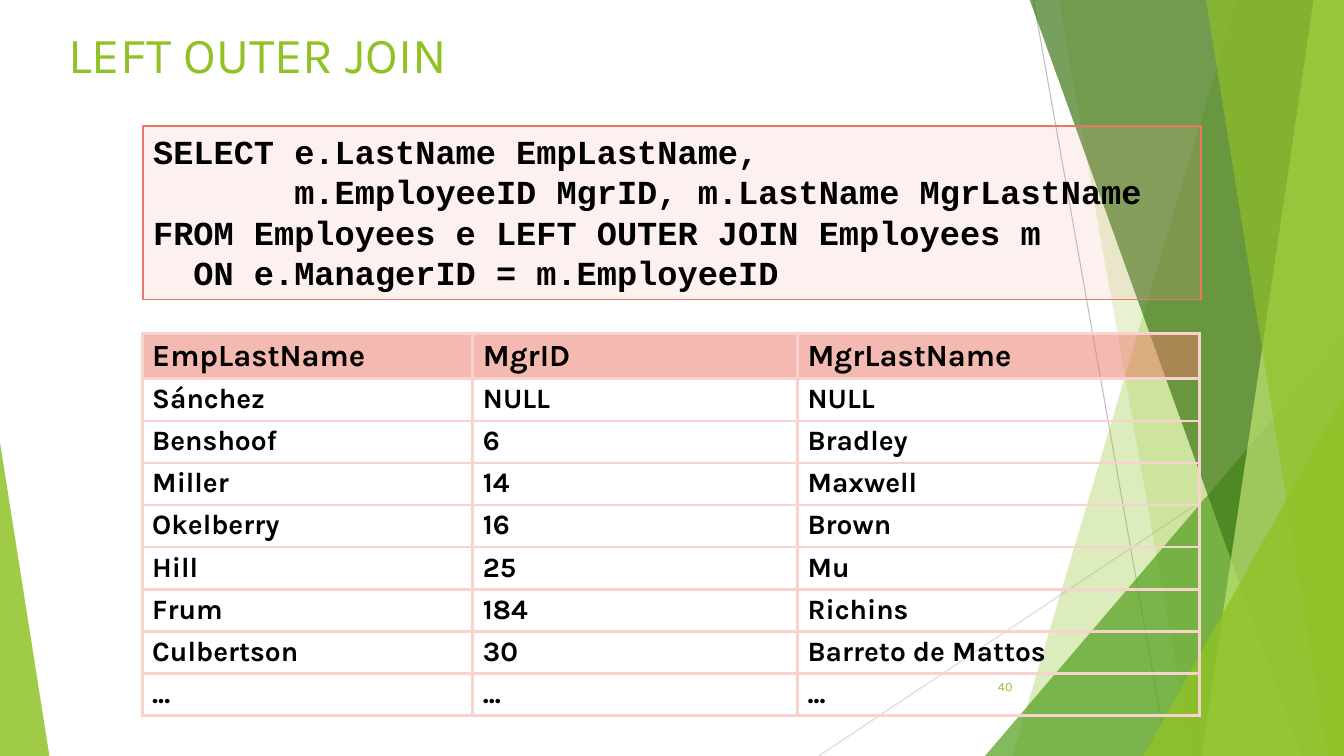
from lxml import etree
from pptx import Presentation
from pptx.dml.color import RGBColor
from pptx.enum.shapes import MSO_CONNECTOR, MSO_SHAPE
from pptx.enum.text import MSO_ANCHOR, MSO_AUTO_SIZE, PP_ALIGN
from pptx.oxml.ns import qn
from pptx.util import Inches, Pt

STRAIGHT = MSO_CONNECTOR.STRAIGHT
TRIANGLE = MSO_SHAPE.ISOSCELES_TRIANGLE
RECTANGLE = MSO_SHAPE.RECTANGLE
MIDDLE = MSO_ANCHOR.MIDDLE
TOP = MSO_ANCHOR.TOP
LEFT = PP_ALIGN.LEFT
RIGHT = PP_ALIGN.RIGHT
FIT_SHAPE = MSO_AUTO_SIZE.SHAPE_TO_FIT_TEXT

BLACK = RGBColor(0x00, 0x00, 0x00)
LIME = RGBColor(0x90, 0xC2, 0x26)
GREEN = RGBColor(0x54, 0xA0, 0x21)
DARK_GREEN = RGBColor(0x3F, 0x78, 0x19)
PALE_LIME = RGBColor(0xC0, 0xE4, 0x74)
GRAY = RGBColor(0xBF, 0xBF, 0xBF)
LIGHT_GRAY = RGBColor(0xD9, 0xD9, 0xD9)
CORAL = RGBColor(0xEB, 0x77, 0x66)
LIGHT_CORAL = RGBColor(0xF2, 0xA4, 0x99)
PALE_CORAL = RGBColor(0xF8, 0xD2, 0xCC)

BODY_FONT = "Karla"
CODE_FONT = "Courier New"
SLIDE_W, SLIDE_H = 13.33, 7.5
BAND_TOP = -0.01

QUERY = """SELECT e.LastName EmpLastName,
       m.EmployeeID MgrID, m.LastName MgrLastName
FROM Employees e LEFT OUTER JOIN Employees m
  ON e.ManagerID = m.EmployeeID"""

RESULT_ROWS = [
    ("EmpLastName", "MgrID", "MgrLastName"),
    ("Sánchez", "NULL", "NULL"),
    ("Benshoof", "6", "Bradley"),
    ("Miller", "14", "Maxwell"),
    ("Okelberry", "16", "Brown"),
    ("Hill", "25", "Mu"),
    ("Frum", "184", "Richins"),
    ("Culbertson", "30", "Barreto de Mattos"),
    ("...", "...", "..."),
]
COLUMN_WIDTHS = (3.28, 3.22, 3.99)
ROW_HEIGHT = 0.38


def fill_translucent(fill, color, opacity):
    """Fill with a colour at the given opacity in percent."""
    fill.solid()
    fill.fore_color.rgb = color
    color_element = fill._xPr.find(qn("a:solidFill"))[0]
    etree.SubElement(color_element, qn("a:alpha"), val=str(opacity * 1000))


def style_runs(frame, font_name, size, color, bold=False, align=LEFT):
    for paragraph in frame.paragraphs:
        paragraph.alignment = align
        for run in paragraph.runs:
            run.font.name = font_name
            run.font.size = Pt(size)
            run.font.color.rgb = color
            run.font.bold = bold


def add_ray(slide, start, end, color):
    ray = slide.shapes.add_connector(STRAIGHT, *map(Inches, start + end))
    ray.line.color.rgb = color
    ray.line.width = Pt(0.75)
    etree.SubElement(ray._element.spPr, qn("a:effectLst"))


def add_band(slide, top_x, bottom_x, color, opacity):
    """Draw a full-height band from a slanted left edge to the slide's right edge."""
    builder = slide.shapes.build_freeform(Inches(top_x), Inches(BAND_TOP))
    corners = [(SLIDE_W, BAND_TOP), (SLIDE_W, SLIDE_H), (bottom_x, SLIDE_H)]
    builder.add_line_segments([(Inches(x), Inches(y)) for x, y in corners])
    band = builder.convert_to_shape()
    band.shadow.inherit = False
    band.line.fill.background()
    fill_translucent(band.fill, color, opacity)


def add_corner(slide, left, top, width, apex, color, opacity):
    """Draw a triangle standing on the slide's bottom edge."""
    corner = slide.shapes.add_shape(
        TRIANGLE, Inches(left), Inches(top), Inches(width), Inches(SLIDE_H - top))
    corner.adjustments[0] = apex
    corner.shadow.inherit = False
    corner.line.fill.background()
    fill_translucent(corner.fill, color, opacity)


def add_background(slide):
    add_ray(slide, (10.25, 0), (11.58, SLIDE_H), GRAY)
    add_ray(slide, (SLIDE_W, 4.03), (8.12, SLIDE_H), LIGHT_GRAY)
    add_band(slide, 12.27, 10.04, LIME, 30)
    add_band(slide, 10.5, 11.82, LIME, 20)
    add_corner(slide, 9.77, 3.33, 3.56, 1, GREEN, 72)
    add_band(slide, 10.21, 12.91, DARK_GREEN, 70)
    add_band(slide, 13.03, 11.92, PALE_LIME, 70)
    add_band(slide, 11.96, 13.17, LIME, 65)
    add_corner(slide, 11.34, 3.93, 1.99, 1, LIME, 80)
    add_corner(slide, 0, 4.39, 0.49, 0, LIME, 85)


def add_label(slide, text, box, size, anchor=TOP, align=LEFT):
    label = slide.shapes.add_textbox(*map(Inches, box))
    frame = label.text_frame
    frame.word_wrap = True
    frame.vertical_anchor = anchor
    frame.text = text
    style_runs(frame, BODY_FONT, size, LIME, align=align)


def add_query_box(slide):
    query_box = slide.shapes.add_shape(
        RECTANGLE, Inches(1.42), Inches(1.25), Inches(10.49), Inches(1.72))
    query_box.shadow.inherit = False
    fill_translucent(query_box.fill, LIGHT_CORAL, 15)
    query_box.line.color.rgb = CORAL
    query_box.line.width = Pt(1)
    frame = query_box.text_frame
    frame.word_wrap = True
    frame.auto_size = FIT_SHAPE
    frame.vertical_anchor = TOP
    frame.text = QUERY
    style_runs(frame, CODE_FONT, 24, BLACK, bold=True)


def set_borders(cell, color, width):
    properties = cell._tc.get_or_add_tcPr()
    for index, side in enumerate(("a:lnL", "a:lnR", "a:lnT", "a:lnB")):
        border = etree.Element(qn(side), w=str(Pt(width)))
        solid = etree.SubElement(border, qn("a:solidFill"))
        etree.SubElement(solid, qn("a:srgbClr"), val=str(color))
        properties.insert(index, border)


def set_spacing(paragraph):
    """Set tight lines with a space before of 40 percent of a line."""
    paragraph.line_spacing = 0.95
    properties = paragraph._p.get_or_add_pPr()
    space_before = etree.Element(qn("a:spcBef"))
    etree.SubElement(space_before, qn("a:spcPct"), val="40000")
    properties.find(qn("a:lnSpc")).addnext(space_before)


def fill_cell(cell, text, is_header):
    cell.text = text
    style_runs(cell.text_frame, BODY_FONT, 22 if is_header else 20, BLACK, bold=True)
    set_spacing(cell.text_frame.paragraphs[0])
    if is_header:
        fill_translucent(cell.fill, CORAL, 50)
    else:
        cell.fill.background()
    set_borders(cell, PALE_CORAL, 2.25)


def add_result_table(slide):
    table = slide.shapes.add_table(
        len(RESULT_ROWS), len(COLUMN_WIDTHS), Inches(1.41), Inches(3.31),
        Inches(sum(COLUMN_WIDTHS)), Inches(ROW_HEIGHT * len(RESULT_ROWS))).table
    table.first_row = False
    table.horz_banding = False
    for column, width in zip(table.columns, COLUMN_WIDTHS):
        column.width = Inches(width)
    for row_index, values in enumerate(RESULT_ROWS):
        for column_index, value in enumerate(values):
            fill_cell(table.cell(row_index, column_index), value, row_index == 0)


def main():
    presentation = Presentation()
    presentation.slide_width = Inches(SLIDE_W)
    presentation.slide_height = Inches(SLIDE_H)
    slide = presentation.slides.add_slide(presentation.slide_layouts[6])
    add_background(slide)
    add_label(slide, "LEFT OUTER JOIN", (0.58, 0.18, 9.4, 1.44), 36)
    add_label(slide, "40", (9.39, 6.61, 0.75, 0.4), 9, MIDDLE, RIGHT)
    add_query_box(slide)
    add_result_table(slide)
    presentation.save("out.pptx")


if __name__ == "__main__":
    main()
